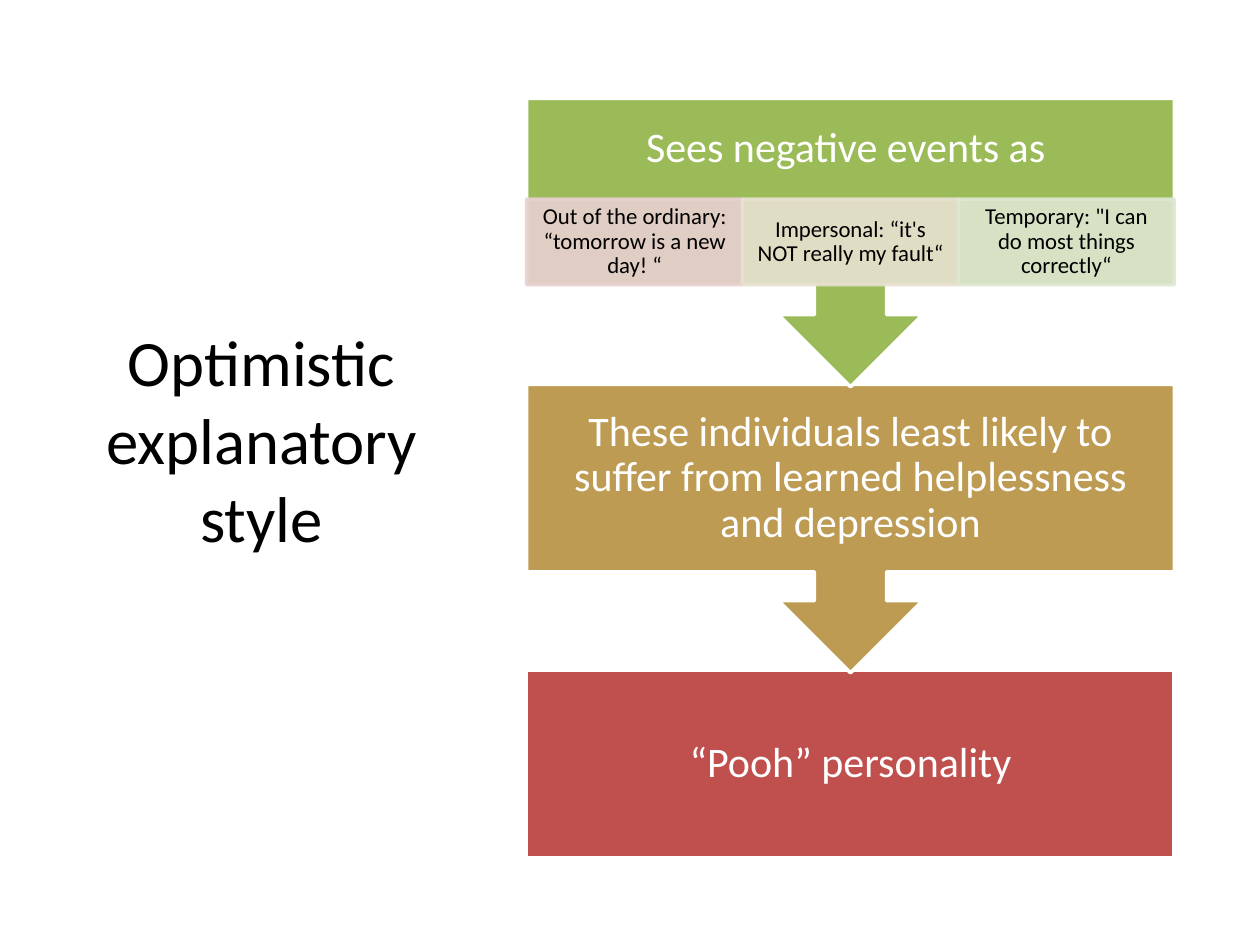
from lxml import etree
from pptx import Presentation
from pptx.dml.color import RGBColor
from pptx.enum import shapes, text
from pptx.oxml.ns import qn
from pptx.util import Inches, Pt

WHITE = RGBColor(0xFF, 0xFF, 0xFF)
BLACK = RGBColor(0x00, 0x00, 0x00)
GREEN = RGBColor(0x9B, 0xBB, 0x59)
GOLD = RGBColor(0xBD, 0x9B, 0x53)
RED = RGBColor(0xC0, 0x50, 0x4D)
PALE_RED = RGBColor(0xE8, 0xD0, 0xD0)
PALE_GOLD = RGBColor(0xE8, 0xE1, 0xD1)
PALE_GREEN = RGBColor(0xDE, 0xE7, 0xD1)

FONT = "Calibri"
STEP_PITCH = 2.27
BLOCK_HEIGHT = 1.49
CALLOUT_HEIGHT = 2.29
HEADING_HEIGHT = 0.8
DETAIL_HEIGHT = 0.68

DETAILS = [
    ("Out of the ordinary: “tomorrow is a new day! “", PALE_RED),
    ("Impersonal: “it's NOT really my fault“", PALE_GOLD),
    ("Temporary: \"I can do most things correctly“", PALE_GREEN),
]


def write(shape, words, size, color, margins, spacing=0.9):
    """Set centred text in a shape; margins are left, top, right, bottom."""
    frame = shape.text_frame
    frame.text = words
    frame.word_wrap = True
    frame.auto_size = text.MSO_AUTO_SIZE.NONE
    frame.vertical_anchor = text.MSO_ANCHOR.MIDDLE
    (frame.margin_left, frame.margin_top,
     frame.margin_right, frame.margin_bottom) = map(Inches, margins)
    para = frame.paragraphs[0]
    para.alignment = text.PP_ALIGN.CENTER
    para.line_spacing = spacing
    for span in para.runs:
        span.font.name = FONT
        span.font.size = Pt(size)
        span.font.color.rgb = color


def add_block(group, kind, box, fill, line=WHITE):
    """Add a filled and outlined preset shape."""
    block = group.shapes.add_shape(kind, *map(Inches, box))
    block.shadow.inherit = False
    block.fill.solid()
    block.fill.fore_color.rgb = fill
    block.line.color.rgb = line
    block.line.width = Pt(2)
    return block


def set_opacity(shape, percent):
    """Give the fill and line of a shape the same opacity."""
    for color in shape.element.spPr.iter(qn("a:srgbClr")):
        etree.SubElement(color, qn("a:alpha"), val=str(percent * 1000))


def add_callout(group, box, fill, words, label_height):
    """Add a step whose arrow points down to the next step."""
    left, top, width, height = box
    callout = add_block(group, shapes.MSO_SHAPE.UP_ARROW_CALLOUT, box, fill)
    callout.rotation = 180
    label = group.shapes.add_textbox(
        *map(Inches, (left, top, width, label_height)))
    write(label, words, 24, WHITE, (0.19,) * 4)


def add_details(group, box):
    """Divide a strip into equal translucent cells."""
    left, top, width, height = box
    cell_width = width / len(DETAILS)
    for index, (words, color) in enumerate(DETAILS):
        cell_box = (left + index * cell_width, top, cell_width, height)
        cell = add_block(group, shapes.MSO_SHAPE.RECTANGLE, cell_box, color, color)
        set_opacity(cell, 90)
        write(cell, words, 13, BLACK, (0.1, 0.02, 0.1, 0.02))


def add_process(page, box):
    """Build the three-step process from the last step to the first."""
    left, top, width, height = box
    group = page.shapes.add_group_shape()
    first, second, third = (top + index * STEP_PITCH for index in range(3))
    result = add_block(group, shapes.MSO_SHAPE.RECTANGLE,
                       (left, third, width, top + height - third), RED)
    write(result, "“Pooh” personality", 24, WHITE, (0.19,) * 4)
    add_callout(group, (left, second, width, CALLOUT_HEIGHT), GOLD,
                "These individuals least likely to suffer from learned "
                "helplessness and depression", BLOCK_HEIGHT)
    add_callout(group, (left, first, width, CALLOUT_HEIGHT), GREEN,
                "Sees negative events as ", HEADING_HEIGHT)
    add_details(group, (left, first + HEADING_HEIGHT, width, DETAIL_HEIGHT))


def place_title(page, box):
    """Place the title slightly above the middle of its box."""
    title = page.shapes.title
    title.left, title.top, title.width, title.height = map(Inches, box)
    write(title, "Optimistic explanatory style", 37, BLACK,
          (0.1, 0.05, 0.1, 0.67), 1.0)


def main():
    """Build and save the deck."""
    deck = Presentation()
    deck.slide_width, deck.slide_height = Inches(10), Inches(7.5)
    page = deck.slides.add_slide(deck.slide_layouts.get_by_name("Title Only"))
    place_title(page, (0.69, 0.78, 2.77, 6.02))
    add_process(page, (4.18, 0.78, 5.14, 2 * STEP_PITCH + BLOCK_HEIGHT))
    deck.save("out.pptx")


if __name__ == "__main__":
    main()
